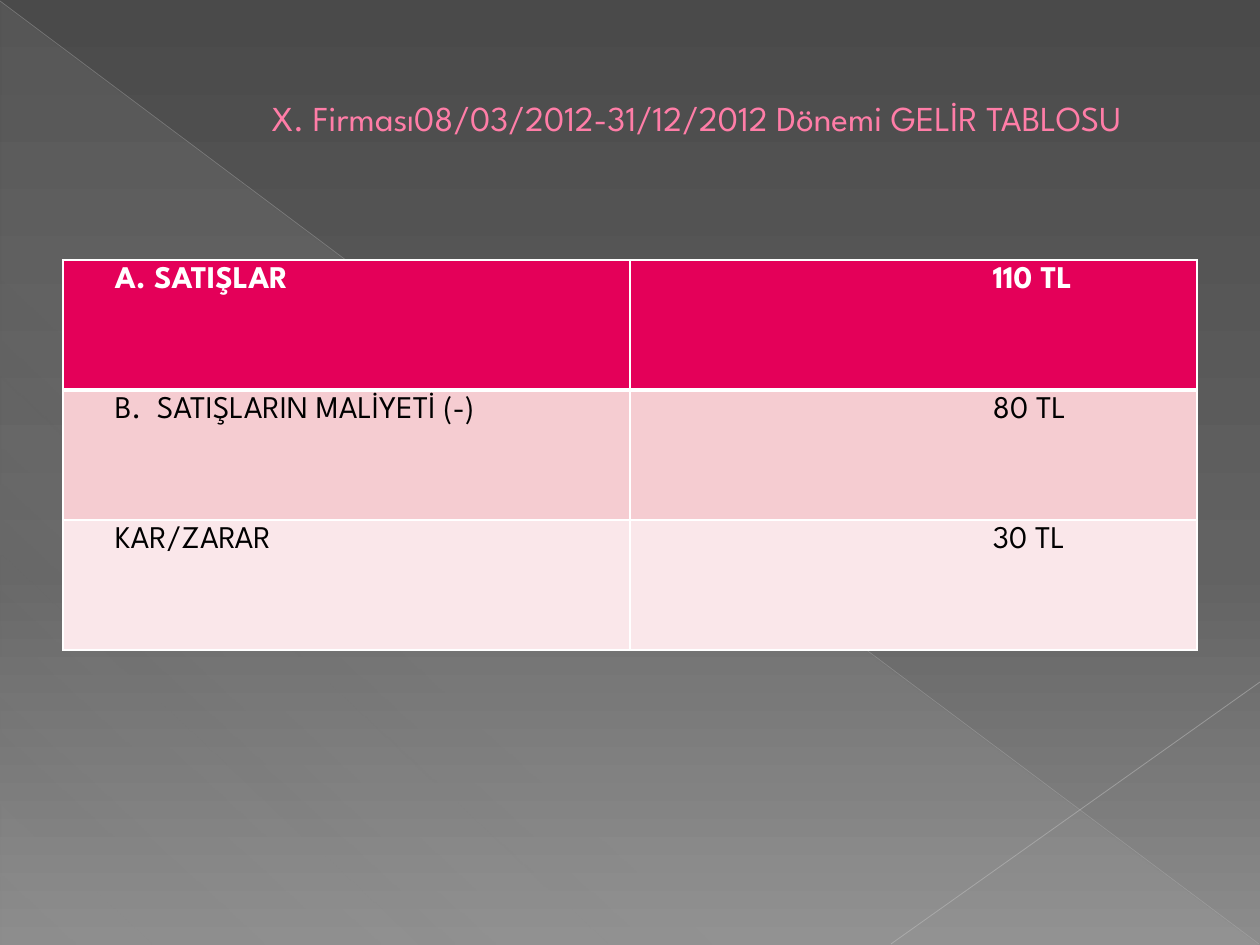
from lxml import etree
from pptx import Presentation
from pptx import util as u
from pptx.dml.color import RGBColor as Rgb
from pptx.enum import shapes, text
from pptx.oxml import parse_xml
from pptx.oxml.ns import nsdecls, qn

FONT = "League Spartan"
HUES = {"title": "FF7DA7", "head": "E40059", "odd": "F5CCD1", "even": "FAE7EA",
        "white": "FFFFFF", "black": "000000", "sheen": "D2D2D2",
        "fall": "BFBFBF", "rise": "C6C6C6",
        "dark": "4A4A4A", "mid": "626262", "light": "8C8C8C"}


def px(n):
    return u.Emu(round(n * 914400 / 126))


def blend(fill, root, stops, angle):
    fill.gradient()
    old = root.find(".//" + qn("a:gradFill"))
    marks = "".join(
        f'<a:gs pos="{pos * 1000}"><a:srgbClr val="{HUES[hue]}">'
        f'<a:alpha val="{alpha * 1000}"/></a:srgbClr></a:gs>'
        for pos, hue, alpha in stops)
    new = parse_xml(f'<a:gradFill {nsdecls("a")} rotWithShape="1"><a:gsLst>{marks}</a:gsLst>'
                    f'<a:lin ang="{angle * 60000}" scaled="0"/></a:gradFill>')
    old.getparent().replace(old, new)


deck = Presentation()
deck.slide_width, deck.slide_height = px(1260), px(945)
slide = deck.slides.add_slide(deck.slide_layouts[6])
blend(slide.background.fill, slide.element,
      [(0, "dark", 100), (60, "mid", 100), (100, "light", 100)], 90)

wedge = slide.shapes.add_shape(shapes.MSO_SHAPE.RIGHT_TRIANGLE, px(1), px(2), px(1258), px(943))
wedge.shadow.inherit = False
wedge.line.fill.background()
blend(wedge.fill, wedge.element,
      [(0, "sheen", 10), (70, "sheen", 8), (100, "sheen", 1)], 133)

for ends, hue, width, alpha in [((0, 1, 1259, 944), "fall", 0.39, 35),
                                ((1260, 682, 891, 944), "rise", 0.47, 45)]:
    line = slide.shapes.add_connector(shapes.MSO_CONNECTOR.STRAIGHT, *map(px, ends))
    line.line.color.rgb = Rgb.from_string(HUES[hue])
    line.line.width = u.Pt(width)
    tint = line.element.spPr.find(".//" + qn("a:srgbClr"))
    etree.SubElement(tint, qn("a:alpha"), val=str(alpha * 1000))
    etree.SubElement(line.element.spPr, qn("a:effectLst"))

title = slide.shapes.add_textbox(px(63), px(38), px(1143), px(158))
frame = title.text_frame
frame.word_wrap = True
frame.vertical_anchor = text.MSO_ANCHOR.MIDDLE
frame.margin_left = px(209)
frame.text = "X. Firması08/03/2012-31/12/2012 Dönemi GELİR TABLOSU"
font = frame.paragraphs[0].runs[0].font
font.name, font.size = FONT, u.Pt(20)
font.color.rgb = Rgb.from_string(HUES["title"])

rows = [("A. SATIŞLAR", "110 TL", "head", "white"),
        ("B.  SATIŞLARIN MALİYETİ (-)", "80 TL", "odd", "black"),
        ("KAR/ZARAR", "30 TL", "even", "black")]
table = slide.shapes.add_table(3, 2, px(63), px(260), px(1134), px(390)).table
for r, (label, value, back, ink) in enumerate(rows):
    table.rows[r].height = px(130)
    for c, words in enumerate((label, value)):
        cell = table.cell(r, c)
        cell.margin_left = px((52, 363)[c])
        cell.text = words
        cell.fill.solid()
        cell.fill.fore_color.rgb = Rgb.from_string(HUES[back])
        font = cell.text_frame.paragraphs[0].runs[0].font
        font.name, font.size, font.bold = FONT, u.Pt(18), r == 0
        font.color.rgb = Rgb.from_string(HUES[ink])
        props = cell._tc.get_or_add_tcPr()
        for i, side in enumerate(("lnL", "lnR", "lnT", "lnB")):
            thick = (r, side) in ((0, "lnB"), (1, "lnT"))
            props.insert(i, parse_xml(
                f'<a:{side} {nsdecls("a")} w="{u.Pt(3 if thick else 1)}"><a:solidFill>'
                f'<a:srgbClr val="{HUES["white"]}"/></a:solidFill></a:{side}>'))

deck.save("out.pptx")
